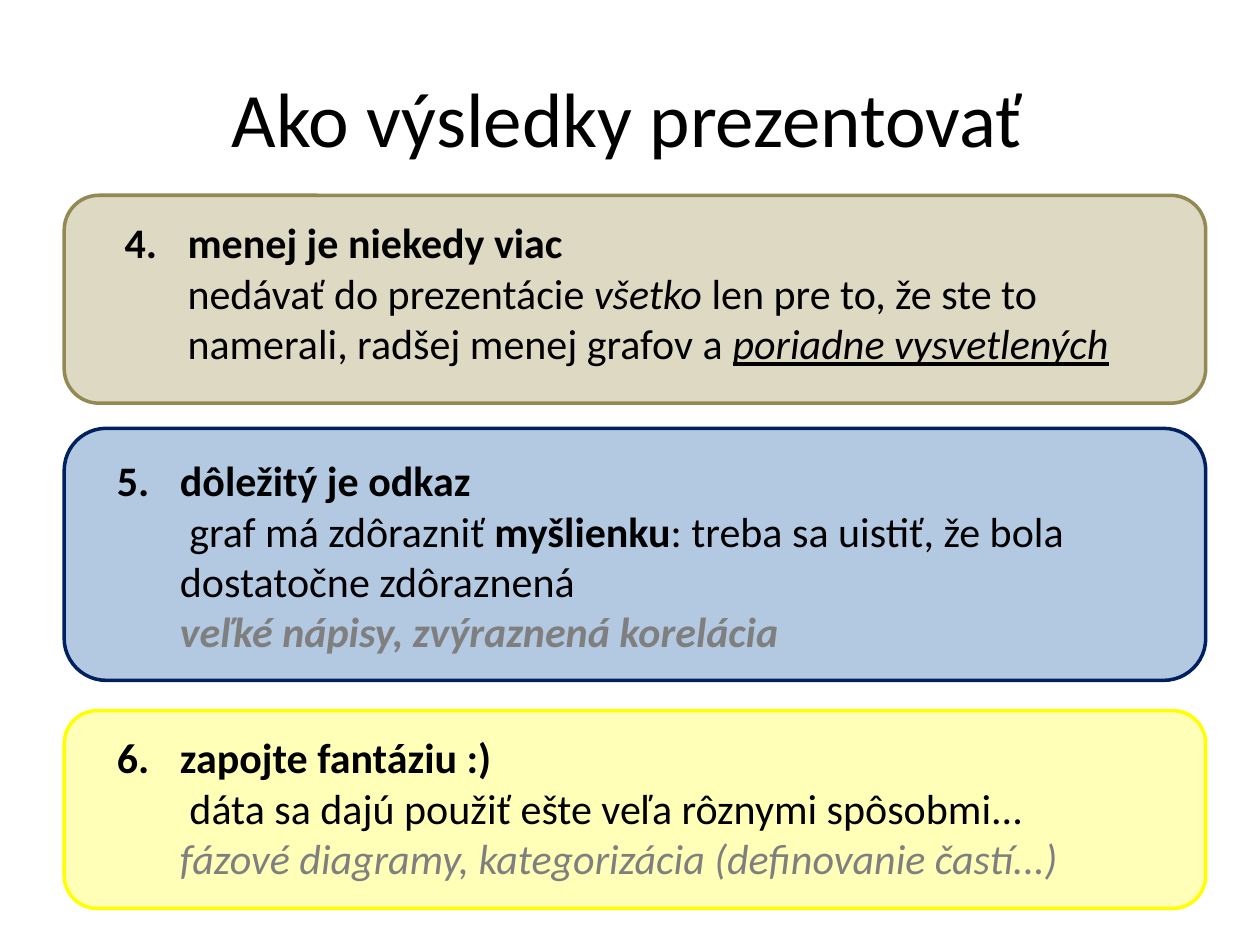
from dataclasses import dataclass

import pptx
import pptx.dml.color
import pptx.enum.shapes
import pptx.enum.text
import pptx.oxml.ns
import pptx.oxml.xmlchemy
import pptx.util
from lxml import etree

Inches = pptx.util.Inches
Pt = pptx.util.Pt
RGBColor = pptx.dml.color.RGBColor
qn = pptx.oxml.ns.qn

FONT = "Calibri"
BLACK = RGBColor(0x00, 0x00, 0x00)
GRAY = RGBColor(0x7F, 0x7F, 0x7F)
TAN = RGBColor(0xDD, 0xD9, 0xC3)
OLIVE = RGBColor(0x93, 0x89, 0x53)
BLUE = RGBColor(0x93, 0xB3, 0xD7)
NAVY = RGBColor(0x00, 0x20, 0x60)
YELLOW = RGBColor(0xFF, 0xFF, 0x00)

CARD_LEFT, CARD_WIDTH = 0.51, 9.06
TEXT_WIDTH = 8.49
HANG = 0.5


@dataclass(frozen=True)
class Span:
    text: str
    bold: bool = False
    italic: bool = False
    underline: bool = False
    color: RGBColor = BLACK


@dataclass(frozen=True)
class Card:
    top: float
    height: float
    fill: RGBColor
    opacity: int
    line: RGBColor
    text_left: float
    text_top: float
    text_height: float
    heading: str
    body: tuple[tuple[Span, ...], ...]


CARDS = (
    Card(1.55, 1.65, TAN, 100, OLIVE, 0.89, 1.67, 1.31,
         "4.\tmenej je niekedy viac",
         ((Span("nedávať do prezentácie "),
           Span("všetko", italic=True),
           Span(" len pre to, že ste to namerali, radšej menej grafov a "),
           Span("poriadne vysvetlených", italic=True, underline=True)),)),
    Card(3.4, 2, BLUE, 70, NAVY, 0.83, 3.56, 1.72,
         "5.\tdôležitý je odkaz",
         ((Span(" graf má zdôrazniť "),
           Span("myšlienku", bold=True),
           Span(": treba sa uistiť, že bola dostatočne zdôraznená")),
          (Span("veľké nápisy, zvýraznená korelácia",
                bold=True, italic=True, color=GRAY),))),
    Card(5.64, 1.57, YELLOW, 28, YELLOW, 0.83, 5.76, 1.31,
         "6.\tzapojte fantáziu :)",
         ((Span(" dáta sa dajú použiť ešte veľa rôznymi spôsobmi..."),),
          (Span("fázové diagramy, kategorizácia (definovanie častí...)",
                italic=True, color=GRAY),))),
)


def add_span(p, span: Span, size: float) -> None:
    r = p.add_run()
    r.text = span.text
    font = r.font
    font.name, font.size = FONT, Pt(size)
    font.bold, font.italic = span.bold, span.italic
    font.underline = span.underline
    font.color.rgb = span.color


def add_title(s, text: str) -> None:
    box = s.shapes.add_textbox(Inches(0.08), Inches(0.3), Inches(9.8), Inches(1.25))
    tf = box.text_frame
    tf.word_wrap = True
    tf.vertical_anchor = pptx.enum.text.MSO_ANCHOR.MIDDLE
    p = tf.paragraphs[0]
    p.alignment = pptx.enum.text.PP_ALIGN.CENTER
    add_span(p, Span(text), 44)


def add_card(s, card: Card) -> None:
    sp = s.shapes.add_shape(
        pptx.enum.shapes.MSO_SHAPE.ROUNDED_RECTANGLE,
        Inches(CARD_LEFT), Inches(card.top), Inches(CARD_WIDTH), Inches(card.height))
    sp.shadow.inherit = False
    sp.fill.solid()
    sp.fill.fore_color.rgb = card.fill
    if card.opacity < 100:
        color = sp.fill._xPr.find(qn("a:solidFill"))[0]
        etree.SubElement(color, qn("a:alpha")).set("val", str(card.opacity * 1000))
    sp.line.color.rgb = card.line
    sp.line.width = Pt(2)

    box = s.shapes.add_textbox(Inches(card.text_left), Inches(card.text_top),
                               Inches(TEXT_WIDTH), Inches(card.text_height))
    tf = box.text_frame
    tf.word_wrap = True
    tf.auto_size = pptx.enum.text.MSO_AUTO_SIZE.SHAPE_TO_FIT_TEXT
    lines = ((Span(card.heading, bold=True),), *card.body)
    for i, spans in enumerate(lines):
        p = tf.add_paragraph() if i else tf.paragraphs[0]
        pPr = p._p.get_or_add_pPr()
        pPr.set("marL", str(Inches(HANG)))
        pPr.set("indent", str(0 if i else -Inches(HANG)))
        for span in spans:
            add_span(p, span, 24)


def main() -> None:
    prs = pptx.Presentation()
    prs.slide_width, prs.slide_height = Inches(10), Inches(7.5)
    s = prs.slides.add_slide(prs.slide_layouts[6])
    add_title(s, "Ako výsledky prezentovať")
    for card in CARDS:
        add_card(s, card)
    prs.save("out.pptx")


if __name__ == "__main__":
    main()
